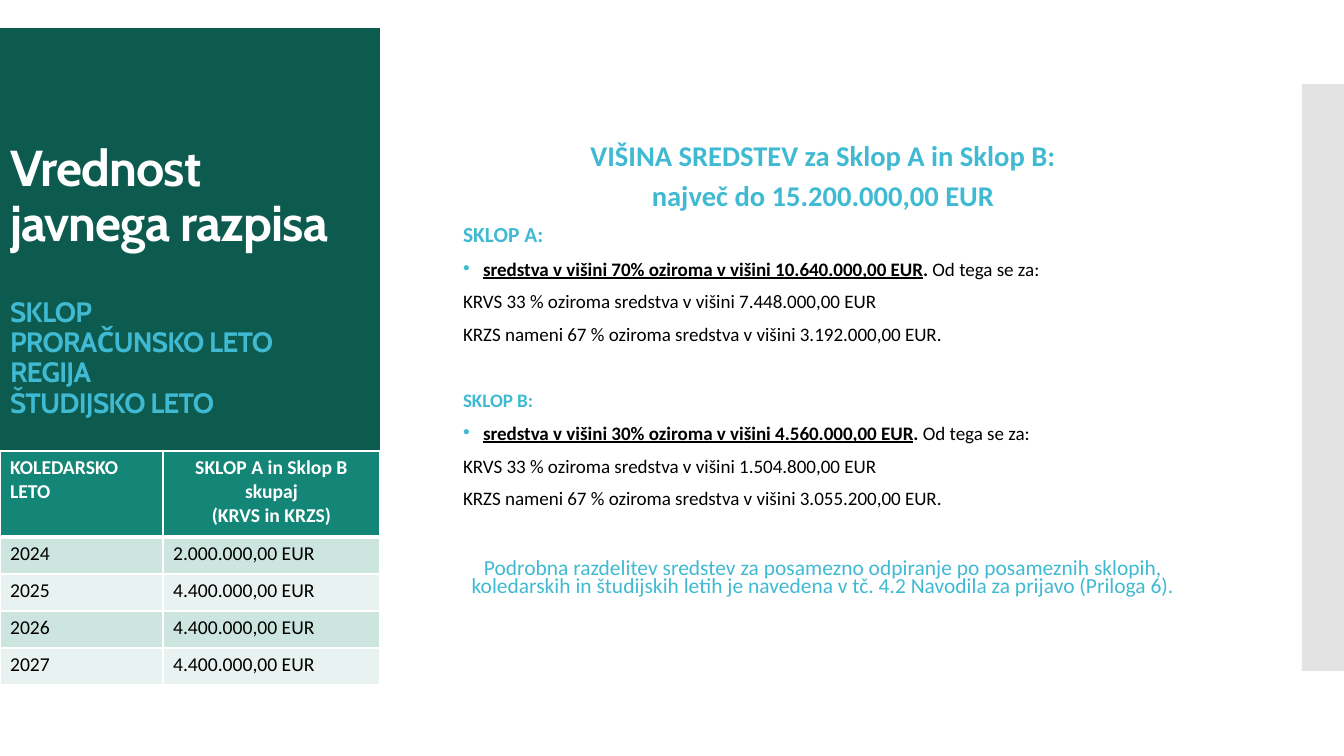
from lxml.etree import SubElement
from pptx import Presentation
from pptx.dml.color import RGBColor
from pptx.enum.shapes import MSO_SHAPE
from pptx.enum.text import MSO_ANCHOR, MSO_AUTO_SIZE, PP_ALIGN
from pptx.oxml.ns import qn
from pptx.util import Emu, Pt

CYAN, WHITE, BLACK = "40BAD2", "FFFFFF", "000000"
DARK_GREEN, GREEN = "0D5A4F", "138677"
BANDS = ["CDE5DF", "E8F2F0"]


def px(n):
    return Emu(round(n * 914400 / 100.8))


def rgb(value):
    return RGBColor.from_string(value)


class Deck:
    font = "Calibri"

    def __init__(self, width, height):
        self.prs = Presentation()
        self.prs.slide_width, self.prs.slide_height = px(width), px(height)
        self.s = self.prs.slides.add_slide(self.prs.slide_layouts[1])

    def run(self, p, text, color=BLACK, spacing=None, **fmt):
        r = p.add_run()
        r.text = text
        for name, value in {"name": self.font, "bold": False, **fmt}.items():
            setattr(r.font, name, value)
        r.font.color.rgb = rgb(color)
        if spacing is not None:
            r.font._element.set("spc", str(spacing))

    def paragraph(self, tf, runs, bullet=False, **fmt):
        first = tf.paragraphs[0]
        p = tf.add_paragraph() if first.runs else first
        for name, value in fmt.items():
            setattr(p, name, value)
        pPr = p._p.get_or_add_pPr()
        indent = px(20) if bullet else 0
        pPr.set("marL", str(indent))
        pPr.set("indent", str(-indent))
        if bullet:
            SubElement(SubElement(pPr, qn("a:buClr")), qn("a:srgbClr"), val=CYAN)
            SubElement(pPr, qn("a:buFont"), typeface="Arial")
            SubElement(pPr, qn("a:buChar"), char="•")
        else:
            SubElement(pPr, qn("a:buNone"))
        for text, style in runs:
            self.run(p, text, **style)

    def placeholder(self, sp, box, top_inset=0, fill=None):
        sp.left, sp.top, sp.width, sp.height = map(px, box)
        if fill:
            sp.fill.solid()
            sp.fill.fore_color.rgb = rgb(fill)
        tf = sp.text_frame
        frame = {"word_wrap": True, "auto_size": MSO_AUTO_SIZE.NONE,
                 "vertical_anchor": MSO_ANCHOR.TOP, "margin_top": px(top_inset),
                 "margin_left": px(10), "margin_right": px(10), "margin_bottom": 0}
        for name, value in frame.items():
            setattr(tf, name, value)
        return tf

    def rect(self, box, fill, alpha):
        sp = self.s.shapes.add_shape(MSO_SHAPE.RECTANGLE, *map(px, box))
        sp.shadow.inherit = False
        sp.line.fill.background()
        sp.fill.solid()
        sp.fill.fore_color.rgb = rgb(fill)
        clr = sp._element.spPr.find(qn("a:solidFill")).find(qn("a:srgbClr"))
        SubElement(clr, qn("a:alpha"), val=str(alpha * 1000))

    def cell(self, cell, lines, fill, borders, align, **style):
        tcPr = cell._tc.get_or_add_tcPr()
        for side, points in borders.items():
            ln = SubElement(tcPr, qn("a:ln" + side), w=str(Pt(points)))
            SubElement(SubElement(ln, qn("a:solidFill")), qn("a:srgbClr"), val=WHITE)
        cell.fill.solid()
        cell.fill.fore_color.rgb = rgb(fill)
        for line in lines:
            self.paragraph(cell.text_frame, [(line, style)], alignment=align)

    def table(self, left, top, widths, heights, rows):
        box = (left, top, sum(widths), sum(heights))
        tbl = self.s.shapes.add_table(len(rows), len(widths), *map(px, box)).table
        for column, width in zip(tbl.columns, widths):
            column.width = px(width)
        for i, row in enumerate(rows):
            tbl.rows[i].height = px(heights[i])
            header = i == 0
            borders = {"L": 1, "R": 1, "T": 3 if i == 1 else 1, "B": 3 if header else 1}
            for j, text in enumerate(row):
                self.cell(tbl.cell(i, j), text.split("\n"),
                          GREEN if header else BANDS[(i - 1) % 2], borders,
                          PP_ALIGN.CENTER if header and j else PP_ALIGN.LEFT,
                          size=Pt(14), bold=header, color=WHITE if header else BLACK)


def main():
    deck = Deck(1344, 756)

    # Side panel with title and topic list
    tf = deck.placeholder(deck.s.shapes.title, (0, 28, 380, 655), 115, DARK_GREEN)
    topics = ["SKLOP", "PRORAČUNSKO LETO", "REGIJA", "ŠTUDIJSKO LETO"]
    panel = [("Vrednost javnega razpisa", 36, WHITE, 0)]
    panel += [(topic, 20, CYAN, 0 if i else 33) for i, topic in enumerate(topics)]
    for text, size, color, before in panel:
        style = {"name": "Cabin", "size": Pt(size), "bold": True, "color": color, "spacing": -60}
        deck.paragraph(tf, [(text, style)], alignment=PP_ALIGN.LEFT,
                       line_spacing=0.9, space_before=Pt(before))

    # Funding amounts
    tf = deck.placeholder(deck.s.placeholders[1], (453, 147, 740, 453))

    def line(runs, before=12, align=PP_ALIGN.JUSTIFY, bullet=False):
        deck.paragraph(tf, runs, bullet, alignment=align, line_spacing=0.7,
                       space_before=Pt(before))

    heading = {"size": Pt(20.4), "bold": True, "color": CYAN}
    plain = {"size": Pt(13.6)}
    strong = {**plain, "bold": True}
    line([("VIŠINA SREDSTEV za Sklop A in Sklop B:", heading)], 0, PP_ALIGN.CENTER)
    line([("največ do 15.200.000,00 EUR", heading)], 12, PP_ALIGN.CENTER)
    lots = [("A", 15.3, 12, "70", "10.640.000,00", "7.448.000,00", "3.192.000,00"),
            ("B", 13.6, 35.6, "30", "4.560.000,00", "1.504.800,00", "3.055.200,00")]
    for lot, size, before, share, total, krvs, krzs in lots:
        line([(f"SKLOP {lot}:", {**heading, "size": Pt(size)})], before)
        line([(f"sredstva v višini {share}% oziroma v višini {total} EUR",
               {**strong, "underline": True}),
              (". ", strong), ("Od tega se za:", plain)], bullet=True)
        line([(f"KRVS 33 % oziroma sredstva v višini {krvs} EUR", plain)])
        line([(f"KRZS nameni 67 % oziroma sredstva v višini {krzs} EUR.", plain)])
    line([("Podrobna razdelitev sredstev za posamezno odpiranje po posameznih sklopih, "
           "koledarskih in študijskih letih je navedena v tč. 4.2 Navodila za prijavo "
           "(Priloga 6).", {"size": Pt(15.3), "color": CYAN})], 37.1, PP_ALIGN.CENTER)

    # Right edge band
    deck.rect((1302, 84, 42, 587), "C8C8C8", 50)

    # Amounts by calendar year
    rows = [("KOLEDARSKO LETO", "SKLOP A in Sklop B skupaj\n(KRVS in KRZS)"),
            ("2024", "2.000.000,00 EUR"), ("2025", "4.400.000,00 EUR"),
            ("2026", "4.400.000,00 EUR"), ("2027", "4.400.000,00 EUR")]
    deck.table(0, 451, [163, 217], [86] + [37] * 4, rows)

    deck.prs.save("out.pptx")


if __name__ == "__main__":
    main()
